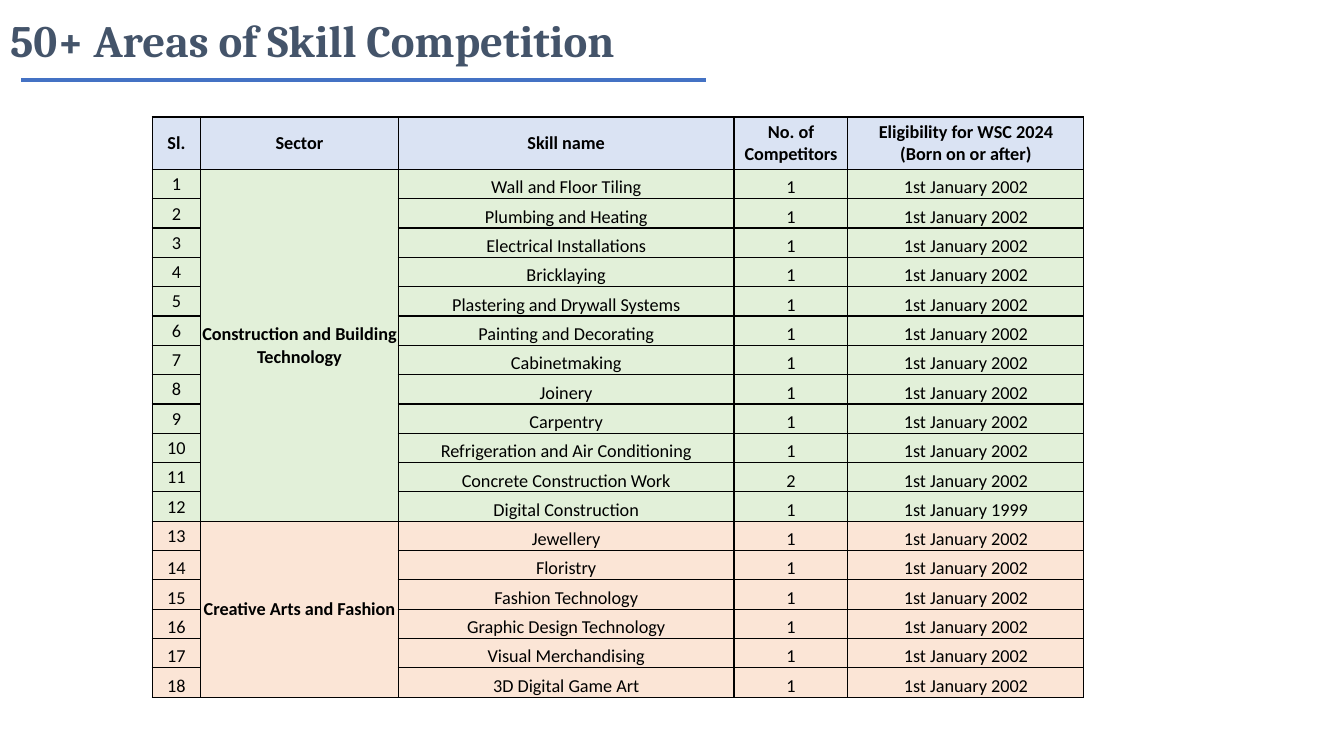
from lxml.etree import SubElement
from pptx import Presentation
from pptx.dml.color import RGBColor
from pptx.enum.shapes import MSO_CONNECTOR as Connector
from pptx.enum.text import MSO_ANCHOR as Anchor, MSO_AUTO_SIZE as AutoSize, PP_ALIGN as Align
from pptx.oxml.ns import qn
from pptx.util import Inches, Pt

COLORS = {"title": "44546A", "rule": "4472C4", "header": "DAE3F3", "construction": "E2F0D9",
          "creative": "FBE5D6", "text": "000000", "border": "000000"}

HEADERS = ["Sl.", "Sector", "Skill name", "No. of Competitors",
           "Eligibility for WSC 2024\n(Born on or after)"]
SECTORS = [
    ("Construction and Building Technology", "construction", [
        "Wall and Floor Tiling", "Plumbing and Heating", "Electrical Installations",
        "Bricklaying", "Plastering and Drywall Systems", "Painting and Decorating",
        "Cabinetmaking", "Joinery", "Carpentry", "Refrigeration and Air Conditioning",
        "Concrete Construction Work", "Digital Construction"]),
    ("Creative Arts and Fashion", "creative", [
        "Jewellery", "Floristry", "Fashion Technology", "Graphic Design Technology",
        "Visual Merchandising", "3D Digital Game Art"]),
]
COMPETITORS = {"Concrete Construction Work": "2"}  # all other skills: 1
BORN_AFTER = {"Digital Construction": "1st January 1999"}  # all others: 2002
LAST_CENTRED_SERIAL = 13  # later serial numbers sit at the bottom of their cell

COLUMN_WIDTHS = [0.48, 1.96, 3.33, 1.13, 2.34]
TABLE_HEIGHT, HEADER_HEIGHT = 5.76, 0.52


def rgb(name):
    return RGBColor.from_string(COLORS[name])


class SlideBuilder:
    def __init__(self, slide):
        self.slide = slide

    def style(self, paragraph, font, size, color, bold, align):
        paragraph.alignment = align
        paragraph.font.name = font
        paragraph.font.size = Pt(size)
        paragraph.font.bold = bold
        paragraph.font.color.rgb = rgb(color)

    def title(self, text, left, top, width, height):
        title = self.slide.shapes.title
        title.left, title.top = Inches(left), Inches(top)
        title.width, title.height = Inches(width), Inches(height)
        frame = title.text_frame
        frame.text = text
        frame.word_wrap = True
        frame.auto_size = AutoSize.SHAPE_TO_FIT_TEXT
        frame.vertical_anchor = Anchor.TOP
        frame.margin_left = frame.margin_right = frame.margin_bottom = 0
        frame.margin_top = Inches(0.01)
        self.style(frame.paragraphs[0], "Cambria", 32, "title", True, Align.JUSTIFY)

    def rule(self, left, right, y):
        rule = self.slide.shapes.add_connector(
            Connector.STRAIGHT, Inches(left), Inches(y), Inches(right), Inches(y))
        rule.line.color.rgb = rgb("rule")
        rule.line.width = Pt(3)
        SubElement(rule._element.spPr, qn("a:effectLst"))

    def table(self, left, top, row_count):
        table = self.slide.shapes.add_table(
            row_count, len(COLUMN_WIDTHS), Inches(left), Inches(top),
            Inches(sum(COLUMN_WIDTHS)), Inches(TABLE_HEIGHT)).table
        table.horz_banding = False
        for column, width in zip(table.columns, COLUMN_WIDTHS):
            column.width = Inches(width)
        skill_height = (TABLE_HEIGHT - HEADER_HEIGHT) / (row_count - 1)
        for index, row in enumerate(table.rows):
            row.height = Inches(skill_height if index else HEADER_HEIGHT)
        return table

    def cell(self, cell, text, fill, bold=False, anchor=Anchor.MIDDLE):
        cell.margin_left = cell.margin_right = cell.margin_top = Inches(0.01)
        cell.margin_bottom = 0
        cell.vertical_anchor = anchor
        self.borders(cell)
        cell.fill.solid()
        cell.fill.fore_color.rgb = rgb(fill)
        cell.text = text
        for paragraph in cell.text_frame.paragraphs:
            self.style(paragraph, "Calibri", 13, "text", bold, Align.CENTER)

    def borders(self, cell):
        properties = cell._tc.get_or_add_tcPr()
        for side in ("lnL", "lnR", "lnT", "lnB"):
            line = SubElement(properties, qn(f"a:{side}"), w=str(Pt(1)))
            solid = SubElement(line, qn("a:solidFill"))
            SubElement(solid, qn("a:srgbClr"), val=COLORS["border"])


def main():
    deck = Presentation()
    deck.slide_width, deck.slide_height = Inches(13.33), Inches(7.5)
    builder = SlideBuilder(deck.slides.add_slide(deck.slide_layouts[5]))

    # Heading
    builder.title("50+ Areas of Skill Competition", 0.1, 0.12, 7.22, 0.55)
    builder.rule(0.21, 7, 0.79)

    # Table header
    skill_count = sum(len(skills) for _, _, skills in SECTORS)
    table = builder.table(1.51, 1.16, skill_count + 1)
    for column, header in enumerate(HEADERS):
        builder.cell(table.cell(0, column), header, "header", bold=True)

    # Skills, grouped by sector
    serial = 0
    for sector, fill, skills in SECTORS:
        first = serial + 1
        for skill in skills:
            serial += 1
            serial_anchor = Anchor.MIDDLE if serial <= LAST_CENTRED_SERIAL else Anchor.BOTTOM
            builder.cell(table.cell(serial, 0), str(serial), fill, anchor=serial_anchor)
            builder.cell(table.cell(serial, 1), sector if serial == first else "", fill, bold=True)
            details = [skill, COMPETITORS.get(skill, "1"),
                       BORN_AFTER.get(skill, "1st January 2002")]
            for column, detail in enumerate(details, start=2):
                builder.cell(table.cell(serial, column), detail, fill, anchor=Anchor.BOTTOM)
        table.cell(first, 1).merge(table.cell(serial, 1))

    deck.save("out.pptx")


if __name__ == "__main__":
    main()
